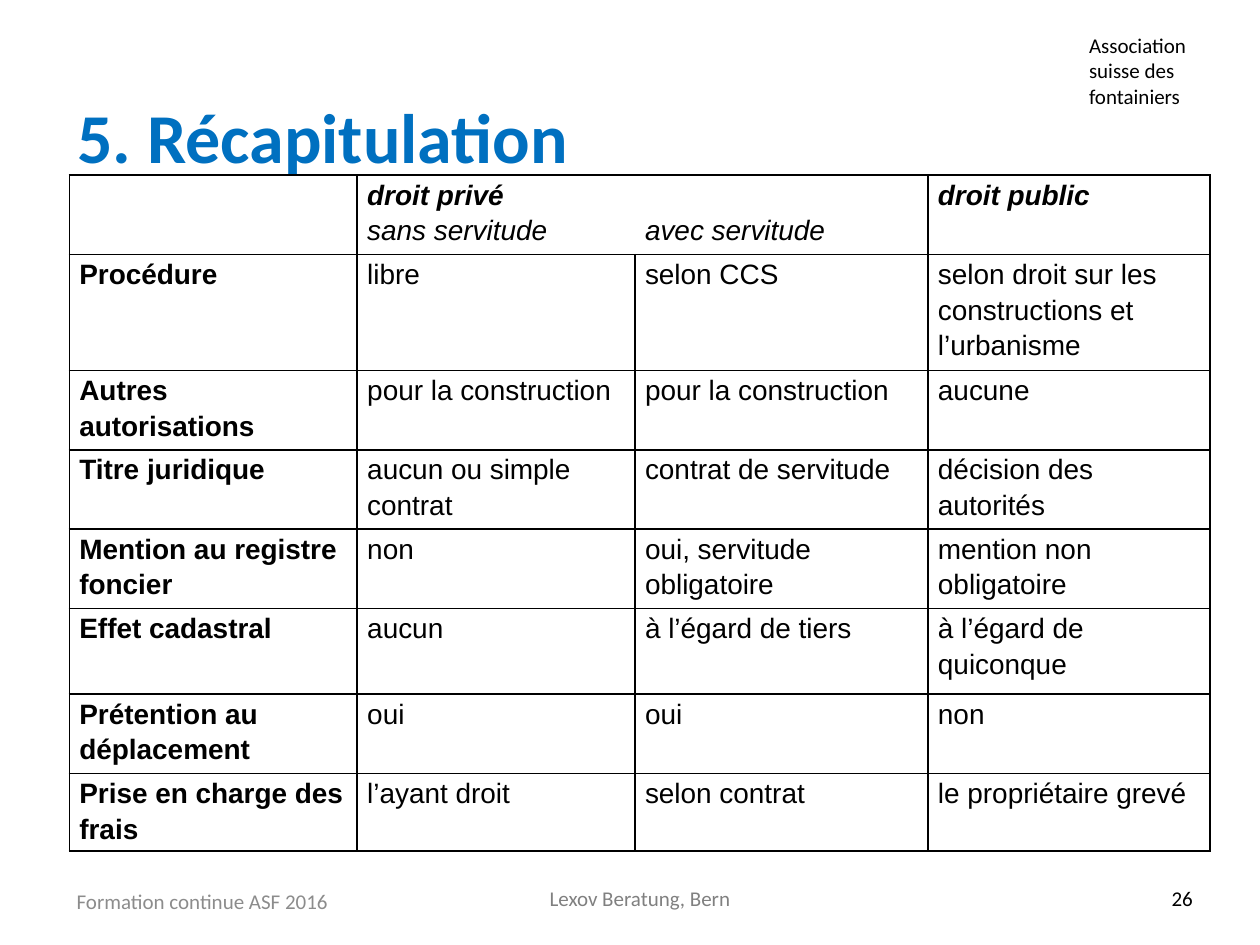
from copy import deepcopy
from dataclasses import dataclass

from lxml import etree
from pptx import Presentation
from pptx import util as u
from pptx.dml.color import RGBColor
from pptx.enum import shapes, text
from pptx.oxml.ns import qn

COLORS = {"title": "0070C0", "text": "000000", "date": "8C8C8C",
          "footer": "808080", "paper": "FFFFFF"}
GRID_COLUMNS, GRID_ROWS = 100, 75
SLIDE_WIDTH, SLIDE_HEIGHT = u.Inches(10), u.Inches(7.5)

COLUMN_WIDTHS = [22.85, 22.05, 23.25, 22.4]
ROW_HEIGHTS = [6.3, 9.2, 6.3, 6.3, 6.3, 6.8, 6.3, 6.15]
HEADER = ["", "droit privé\nsans servitude", "\vavec servitude", "droit public"]
BODY = [
    ["Procédure", "libre", "selon CCS",
     "selon droit sur les constructions et l’urbanisme"],
    ["Autres autorisations", "pour la construction", "pour la construction", "aucune"],
    ["Titre juridique", "aucun ou simple contrat", "contrat de servitude",
     "décision des autorités"],
    ["Mention au registre foncier", "non", "oui, servitude obligatoire",
     "mention non obligatoire"],
    ["Effet cadastral", "aucun", "à l’égard de tiers", "à l’égard de quiconque"],
    ["Prétention au déplacement", "oui", "oui", "non"],
    ["Prise en charge des frais", "l’ayant droit", "selon contrat",
     "le propriétaire grevé"],
]


@dataclass
class Area:
    left: float
    top: float
    width: float
    height: float

    def box(self) -> tuple:
        return (across(self.left), down(self.top), across(self.width), down(self.height))


@dataclass
class Label:
    words: str
    area: Area
    color: str
    align: text.PP_ALIGN = text.PP_ALIGN.LEFT
    anchor: text.MSO_ANCHOR = text.MSO_ANCHOR.TOP
    filled: bool = False


LABELS = [
    Label("Formation continue ASF 2016", Area(5.1, 69.5, 35.5, 4), "date",
          anchor=text.MSO_ANCHOR.MIDDLE),
    Label("Lexov Beratung, Bern", Area(39, 69.8, 23.6, 3), "footer",
          text.PP_ALIGN.CENTER),
    Label("26", Area(90.95, 69.8, 4.7, 3), "text", text.PP_ALIGN.RIGHT),
    Label("Association suisse des fontainiers", Area(85.45, 2.1, 13.8, 7.1), "text",
          filled=True),
]


def across(columns: float) -> int:
    return round(SLIDE_WIDTH * columns / GRID_COLUMNS)


def down(rows: float) -> int:
    return round(SLIDE_HEIGHT * rows / GRID_ROWS)


def set_all(target, values: dict) -> None:
    for name, value in values.items():
        setattr(target, name, value)


def style_paragraph(paragraph, color: str, font: dict, layout: dict) -> None:
    set_all(paragraph, layout)
    for run in paragraph.runs:
        set_all(run.font, font)
        run.font.color.rgb = RGBColor.from_string(COLORS[color])


def draw_title(slide) -> None:
    title = slide.shapes.title
    set_all(title, dict(zip(("left", "top", "width", "height"),
                            Area(5.15, 5.25, 90.6, 11).box())))
    title.text_frame.text = "5. Récapitulation"
    set_all(title.text_frame, {"vertical_anchor": text.MSO_ANCHOR.MIDDLE,
                               "auto_size": text.MSO_AUTO_SIZE.NONE})
    style_paragraph(title.text_frame.paragraphs[0], "title",
                    {"name": "Calibri", "size": u.Pt(40), "bold": True},
                    {"alignment": text.PP_ALIGN.LEFT})


def draw_label(slide, label: Label) -> None:
    if label.filled:
        shape = slide.shapes.add_shape(shapes.MSO_SHAPE.RECTANGLE, *label.area.box())
        shape.shadow.inherit = False
        shape.fill.solid()
        shape.fill.fore_color.rgb = RGBColor.from_string(COLORS["paper"])
        shape.line.fill.background()
    else:
        shape = slide.shapes.add_textbox(*label.area.box())
    shape.text_frame.text = label.words
    set_all(shape.text_frame, {"word_wrap": True, "vertical_anchor": label.anchor})
    style_paragraph(shape.text_frame.paragraphs[0], label.color,
                    {"name": "Calibri", "size": u.Pt(12)}, {"alignment": label.align})


def draw_borders(cell, hidden: str) -> None:
    properties = cell._tc.get_or_add_tcPr()
    for position, side in enumerate(("lnL", "lnR", "lnT", "lnB")):
        line = etree.Element(qn(f"a:{side}"), w=str(u.Pt(1)))
        if side == hidden:
            etree.SubElement(line, qn("a:noFill"))
        else:
            fill = etree.SubElement(line, qn("a:solidFill"))
            etree.SubElement(fill, qn("a:srgbClr"), val=COLORS["text"])
        properties.insert(position, line)


def fill_cell(cell, words: str, row: int, column: int) -> None:
    cell.fill.background()
    set_all(cell, {"margin_left": u.Inches(0.08), "margin_right": u.Inches(0.08),
                   "margin_top": 0, "margin_bottom": 0})
    draw_borders(cell, {(0, 1): "lnR", (0, 2): "lnL"}.get((row, column), ""))
    cell.text_frame.text = words
    for paragraph in cell.text_frame.paragraphs:
        heading = column == 0 or paragraph.text.startswith("droit ")
        style_paragraph(paragraph, "text",
                        {"name": "Arial", "size": u.Pt(16), "bold": heading,
                         "italic": row == 0}, {"line_spacing": 1.15})
        for line_break in paragraph._p.findall(qn("a:br")):
            line_break.append(deepcopy(paragraph.runs[0]._r.find(qn("a:rPr"))))


def draw_table(slide) -> None:
    rows = [HEADER] + BODY
    area = Area(5.5, 13.9, sum(COLUMN_WIDTHS), sum(ROW_HEIGHTS))
    table = slide.shapes.add_table(len(rows), len(HEADER), *area.box()).table
    set_all(table, {"first_row": False, "horz_banding": False})
    for column, width in zip(table.columns, COLUMN_WIDTHS):
        column.width = across(width)
    for row, height in zip(table.rows, ROW_HEIGHTS):
        row.height = down(height)
    for row, entries in enumerate(rows):
        for column, words in enumerate(entries):
            fill_cell(table.cell(row, column), words, row, column)


def main() -> None:
    presentation = Presentation()
    set_all(presentation, {"slide_width": SLIDE_WIDTH, "slide_height": SLIDE_HEIGHT})
    slide = presentation.slides.add_slide(presentation.slide_layouts[0])
    subtitle = slide.placeholders[1].element
    subtitle.getparent().remove(subtitle)
    draw_title(slide)
    draw_table(slide)
    for label in LABELS:
        draw_label(slide, label)
    presentation.save("out.pptx")


if __name__ == "__main__":
    main()
